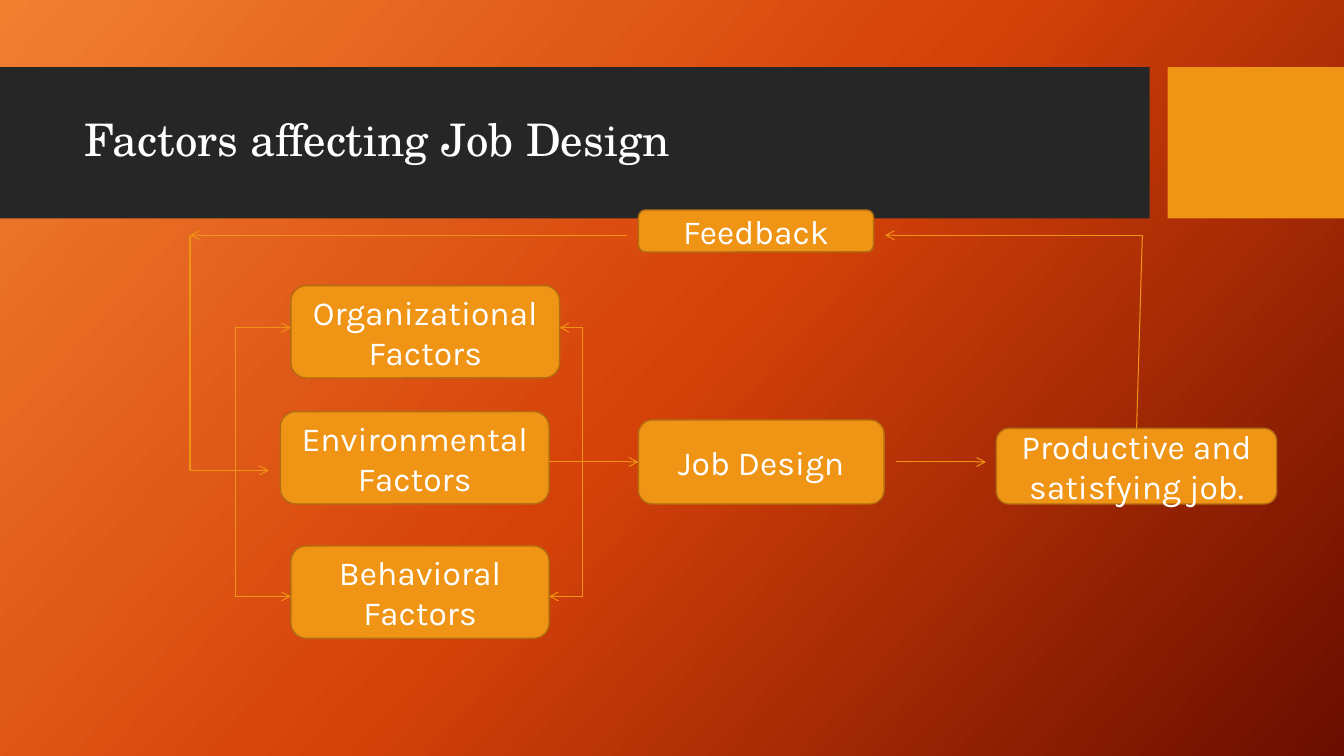
from copy import deepcopy

from pptx import Presentation
from pptx.dml.color import RGBColor
from pptx.enum.shapes import MSO_CONNECTOR, MSO_SHAPE
from pptx.enum.text import MSO_ANCHOR, PP_ALIGN
from pptx.oxml.ns import qn
from pptx.oxml.xmlchemy import OxmlElement
from pptx.util import Pt

RECT, ROUND = MSO_SHAPE.RECTANGLE, MSO_SHAPE.ROUNDED_RECTANGLE
STRAIGHT = MSO_CONNECTOR.STRAIGHT
MIDDLE, CENTER = MSO_ANCHOR.MIDDLE, PP_ALIGN.CENTER
TOP, LEFT = 0, 1
ORANGE, BROWN, DARK, WHITE = "F09415", "B26D10", "262626", "FFFFFF"
GRADIENT = [(0, "F18031"), (0.5, "D54209"), (1, "6A0D00")]


def px(n):
    """Turn px into EMU at 96 px to the inch."""
    return n * 9525


def rgb(value):
    """Turn a hex string into a colour."""
    return RGBColor.from_string(value)


def set_background(s):
    """Fill the slide with the diagonal gradient."""
    fill = s.background.fill
    fill.gradient()
    fill.gradient_angle = 360 - 42
    gs_lst = s.element.find(".//" + qn("a:gsLst"))
    gs_lst.append(deepcopy(gs_lst[-1]))
    for stop, (position, color) in zip(fill.gradient_stops, GRADIENT):
        stop.position = position
        stop.color.rgb = rgb(color)


def add_block(s, kind, box, fill, line=None):
    """Add a filled shape, outlined if a line colour is given."""
    sp = s.shapes.add_shape(kind, *map(px, box))
    sp.shadow.inherit = False
    sp.fill.solid()
    sp.fill.fore_color.rgb = rgb(fill)
    if line:
        sp.line.color.rgb = rgb(line)
        sp.line.width = Pt(1)
    else:
        sp.line.fill.background()
    return sp


def set_text(sp, text, font, size):
    """Write one white, vertically centred paragraph and return it."""
    tf = sp.text_frame
    tf.word_wrap = True
    tf.vertical_anchor = MIDDLE
    p = tf.paragraphs[0]
    p.text = text
    p.font.name = font
    p.font.size = Pt(size)
    p.font.color.rgb = rgb(WHITE)
    return p


def add_title(s, text, box):
    """Add the slide title."""
    sp = s.shapes.add_textbox(*map(px, box))
    set_text(sp, text, "TeX Gyre Schola", 32).line_spacing = 0.9


def add_node(s, text, *box):
    """Add a rounded, labelled box of the diagram."""
    sp = add_block(s, ROUND, box, ORANGE, BROWN)
    set_text(sp, text, "Karla", 24).alignment = CENTER
    return sp


def add_line(s, start, end, arrow=True):
    """Add a thin straight line, with an arrowhead at its end if asked."""
    c = s.shapes.add_connector(STRAIGHT, *map(px, start + end))
    c.line.color.rgb = rgb(ORANGE)
    c.line.width = Pt(0.75)
    if arrow:
        head = OxmlElement("a:tailEnd")
        head.set("type", "arrow")
        c.line._get_or_add_ln().append(head)
    c._element.spPr.append(OxmlElement("a:effectLst"))
    return c


def add_bracket(s, x, top, bottom, top_end, bottom_end):
    """Add a vertical line with an arrow from each of its ends."""
    add_line(s, (x, top), (x, bottom), arrow=False)
    add_line(s, (x, top), (top_end, top))
    add_line(s, (x, bottom), (bottom_end, bottom))


def main():
    """Build the job design slide."""
    prs = Presentation()
    prs.slide_width, prs.slide_height = px(1280), px(720)
    s = prs.slides.add_slide(prs.slide_layouts[6])
    set_background(s)
    add_block(s, RECT, (0, 64, 1095, 144), DARK)
    add_block(s, RECT, (1112, 64, 168, 144), ORANGE)
    add_title(s, "Factors affecting Job Design", (71, 79, 1009, 113))

    add_node(s, "Organizational Factors", 277, 272, 256, 88)
    add_node(s, "Environmental Factors", 267, 392, 256, 88)
    add_node(s, "Behavioral Factors", 277, 520, 246, 88)
    design = add_node(s, "Job Design", 608, 400, 234, 80)
    job = add_node(s, "Productive and satisfying job.", 949, 408, 267, 72)
    add_node(s, "Feedback", 608, 200, 224, 40)

    add_line(s, (523, 440), (608, 440)).end_connect(design, LEFT)
    add_line(s, (853, 440), (939, 440))
    add_line(s, (1083, 408), (1088, 224), arrow=False).begin_connect(job, TOP)
    add_line(s, (1088, 224), (843, 224))
    add_line(s, (597, 224), (181, 224))
    add_line(s, (181, 224), (181, 448), arrow=False)
    add_line(s, (181, 448), (256, 448))
    add_bracket(s, 555, 312, 568, 533, 523)
    add_bracket(s, 224, 312, 568, 277, 277)
    prs.save("out.pptx")


if __name__ == "__main__":
    main()
